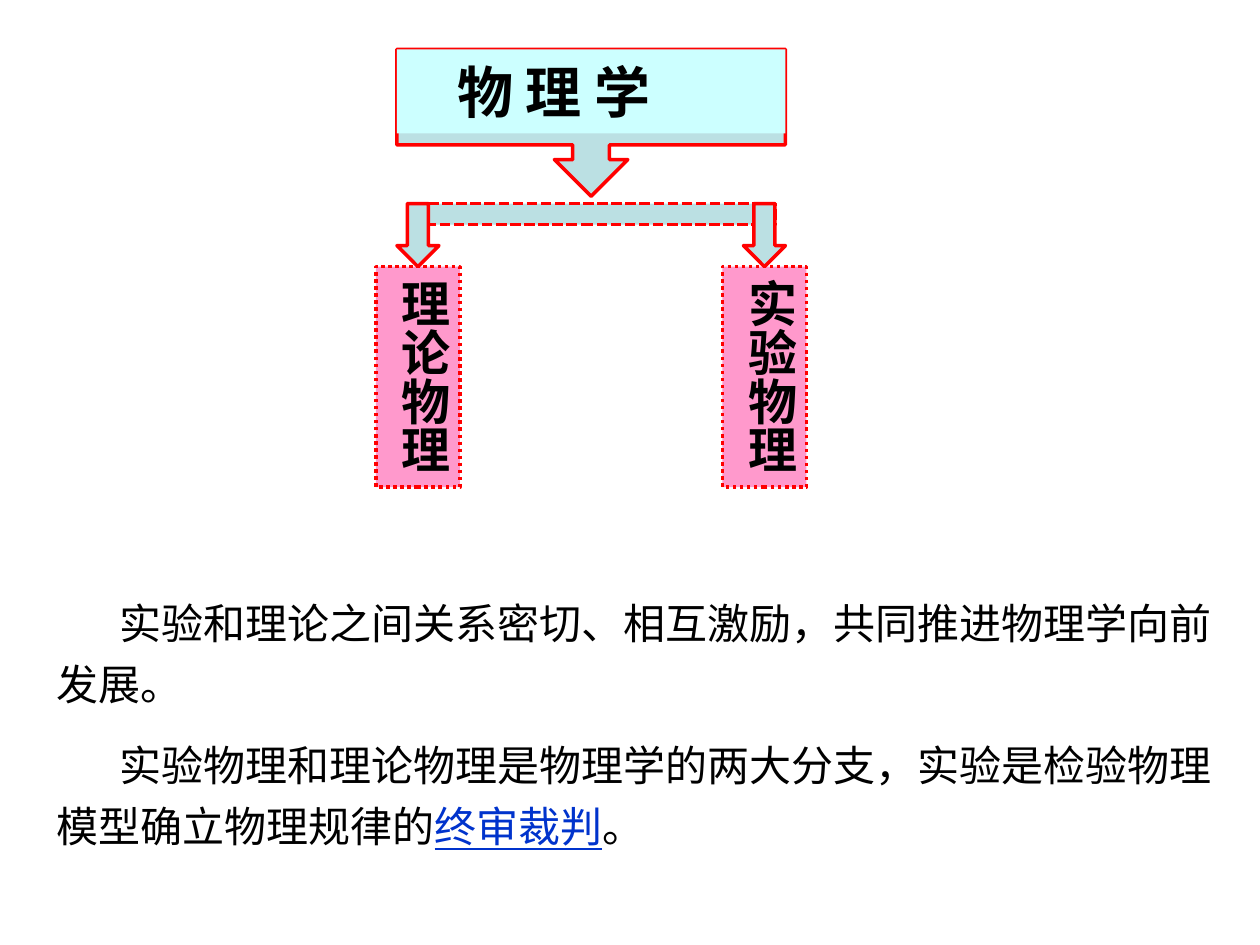
from pptx import Presentation
from pptx.dml.color import RGBColor
from pptx.enum.dml import MSO_LINE
from pptx.enum.shapes import MSO_SHAPE
from pptx.enum.text import MSO_ANCHOR, PP_ALIGN
from pptx.util import Inches, Pt

RED = RGBColor(0xFF, 0x00, 0x00)
TEAL = RGBColor(0xBB, 0xE0, 0xE3)
PINK = RGBColor(0xFF, 0x99, 0xCC)
CYAN = RGBColor(0xCC, 0xFF, 0xFF)
BLACK = RGBColor(0x00, 0x00, 0x00)
BLUE = RGBColor(0x00, 0x33, 0xCC)

prs = Presentation()
prs.slide_width = Inches(10)
prs.slide_height = Inches(7.5)
s = prs.slides.add_slide(prs.slide_layouts[6])
COL = prs.slide_width / 120
ROW = prs.slide_height / 90


def add_box(kind, x, y, w, h, fill, dash=None, outlined=True):
    sp = s.shapes.add_shape(kind, round(x * COL), round(y * ROW), round(w * COL), round(h * ROW))
    sp.shadow.inherit = False
    sp.fill.solid()
    sp.fill.fore_color.rgb = fill
    if outlined:
        sp.line.color.rgb = RED
        sp.line.width = Pt(2)
        if dash:
            sp.line.dash_style = dash
    else:
        sp.line.fill.background()
    return sp


def add_run(p, text, size, color=BLACK, bold=False, font="Arial"):
    r = p.add_run()
    r.text = text
    r.font.size = Pt(size)
    r.font.name = font
    r.font.bold = bold
    r.font.color.rgb = color
    return r


LEFT, TOP, WIDTH = 37.8, 4.7, 37
BAR_TOP, ARROW_W, ARROW_H = 19.4, 4, 6
BRANCH_W, BRANCH_H = 8, 21
branches = [("理论物理", LEFT), ("实验物理", LEFT + WIDTH - ARROW_W)]

add_box(MSO_SHAPE.DOWN_ARROW_CALLOUT, LEFT, TOP, WIDTH, 14, TEAL)

for label, x in branches:
    sp = add_box(MSO_SHAPE.RECTANGLE, x - (BRANCH_W - ARROW_W) / 2, BAR_TOP + ARROW_H,
                 BRANCH_W, BRANCH_H, PINK, MSO_LINE.ROUND_DOT)
    tf = sp.text_frame
    tf.vertical_anchor = MSO_ANCHOR.TOP
    tf._txBody.bodyPr.set("vert", "eaVert")
    p = tf.paragraphs[0]
    p.alignment = PP_ALIGN.CENTER
    add_run(p, label, 28, bold=True)

sp = add_box(MSO_SHAPE.RECTANGLE, LEFT, TOP, WIDTH, 8, CYAN, outlined=False)
tf = sp.text_frame
tf.vertical_anchor = MSO_ANCHOR.MIDDLE
p = tf.paragraphs[0]
p.alignment = PP_ALIGN.LEFT
p._p.get_or_add_pPr().set("marL", str(Inches(0.38)))
add_run(p, "物 理 学", 32, bold=True, font="Noto Sans CJK SC")

add_box(MSO_SHAPE.RECTANGLE, LEFT + 1, BAR_TOP, WIDTH - 2, 2, TEAL, MSO_LINE.SQUARE_DOT)
for label, x in branches:
    add_box(MSO_SHAPE.DOWN_ARROW, x, BAR_TOP, ARROW_W, ARROW_H, TEAL)

sp = s.shapes.add_textbox(round(4.2 * COL), round(55.4 * ROW), round(112.4 * COL), round(26.5 * ROW))
tf = sp.text_frame
tf.word_wrap = True
paragraphs = [
    [("实验和理论之间关系密切、相互激励，共同推进物理学向前发展。", BLACK)],
    [("实验物理和理论物理是物理学的两大分支，实验是检验物理模型确立物理规律的", BLACK),
     ("终审裁判", BLUE), ("。", BLACK)],
]
for i, runs in enumerate(paragraphs):
    p = tf.add_paragraph() if i else tf.paragraphs[0]
    p._p.get_or_add_pPr().set("indent", str(Inches(0.5)))
    p.line_spacing = 1.2
    p.space_before = Pt(12 if i else 0)
    for text, color in runs:
        r = add_run(p, text, 24, color)
        r.font.underline = color == BLUE

prs.save("out.pptx")
